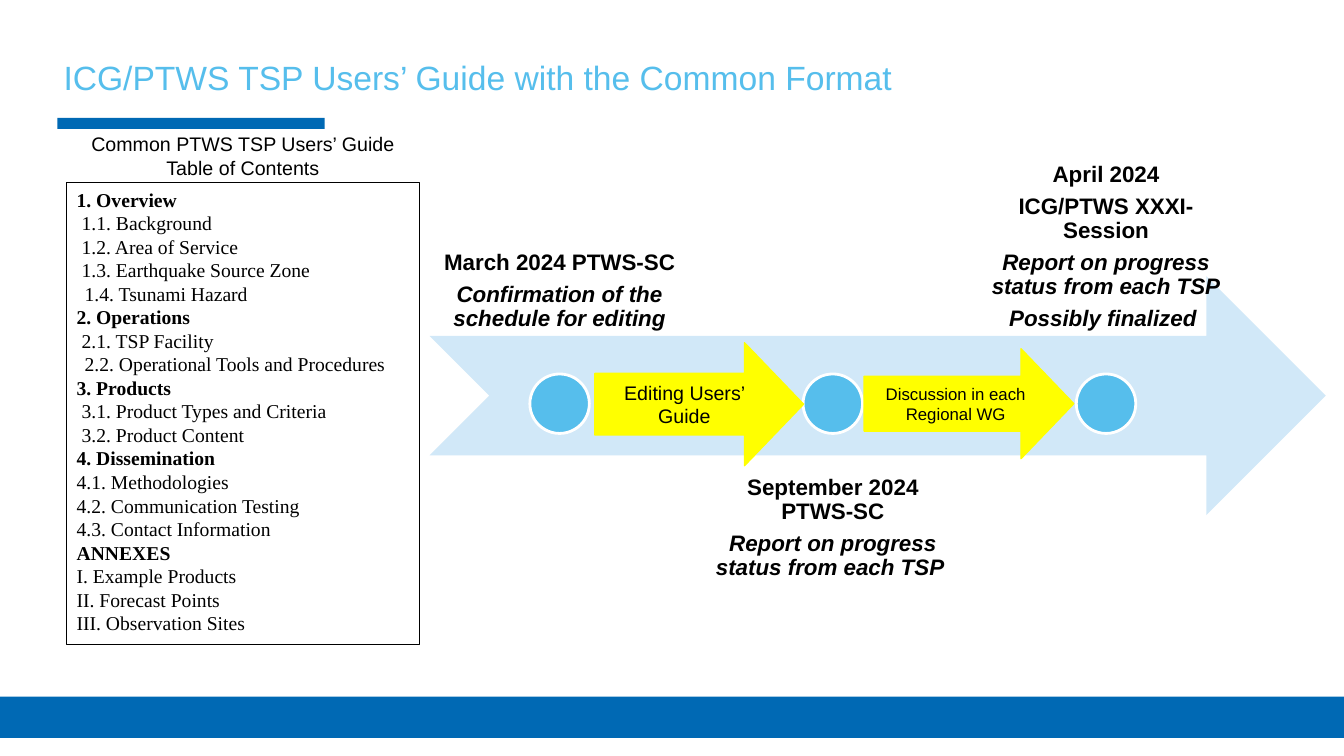
from dataclasses import dataclass
from typing import Optional, Sequence

import pptx
import pptx.dml.color
import pptx.enum.shapes
import pptx.enum.text
import pptx.util
from lxml import etree
from pptx.oxml.ns import qn

Inches = pptx.util.Inches
Pt = pptx.util.Pt
RGBColor = pptx.dml.color.RGBColor
Align = pptx.enum.text.PP_ALIGN
Anchor = pptx.enum.text.MSO_ANCHOR
Preset = pptx.enum.shapes.MSO_SHAPE

BLUE = RGBColor(0x00, 0x69, 0xB4)
SKY = RGBColor(0x56, 0xBE, 0xEC)
PALE_BLUE = RGBColor(0xD1, 0xE8, 0xF8)
YELLOW = RGBColor(0xFF, 0xFF, 0x00)
BLACK = RGBColor(0x00, 0x00, 0x00)
WHITE = RGBColor(0xFF, 0xFF, 0xFF)


@dataclass(frozen=True)
class Box:
    left: float
    top: float
    width: float
    height: float

    def lengths(self) -> list[pptx.util.Length]:
        return [Inches(value) for value in (self.left, self.top, self.width, self.height)]


@dataclass(frozen=True)
class Line:
    text: str
    bold: bool = False
    italic: bool = False
    indent: float = 0


@dataclass(frozen=True)
class Milestone:
    lines: Sequence[Line]
    label_top: float
    anchor: Anchor


@dataclass(frozen=True)
class Step:
    text: str
    box: Box
    size: int


CONTENTS = [
    Line("1. Overview", bold=True),
    Line("1.1. Background", indent=0.05),
    Line("1.2. Area of Service", indent=0.05),
    Line("1.3. Earthquake Source Zone", indent=0.05),
    Line("1.4. Tsunami Hazard", indent=0.08),
    Line("2. Operations", bold=True),
    Line("2.1. TSP Facility", indent=0.05),
    Line("2.2. Operational Tools and Procedures", indent=0.08),
    Line("3. Products", bold=True),
    Line("3.1. Product Types and Criteria", indent=0.05),
    Line("3.2. Product Content", indent=0.05),
    Line("4. Dissemination", bold=True),
    Line("4.1. Methodologies"),
    Line("4.2. Communication Testing"),
    Line("4.3. Contact Information"),
    Line("ANNEXES", bold=True),
    Line("I. Example Products"),
    Line("II. Forecast Points"),
    Line("III. Observation Sites"),
]

MILESTONES = [
    Milestone([
        Line("March 2024 PTWS-SC", bold=True),
        Line("Confirmation of the schedule for editing", bold=True, italic=True),
    ], 1.04, Anchor.BOTTOM),
    Milestone([
        Line("September 2024 PTWS-SC", bold=True),
        Line("Report on progress status from each TSP ", bold=True, italic=True),
    ], 4.6, Anchor.TOP),
    Milestone([
        Line("April 2024", bold=True),
        Line("ICG/PTWS XXXI-Session", bold=True),
        Line("Report on progress status from each TSP", bold=True, italic=True),
        Line("Possibly finalized ", bold=True, italic=True),
    ], 1.04, Anchor.BOTTOM),
]
FIRST_CENTER, MILESTONE_PITCH = 5.55, 2.71
CIRCLE_TOP, CIRCLE_SIZE = 3.71, 0.59
LABEL_WIDTH, LABEL_HEIGHT = 2.58, 2.37

STEPS = [
    Step("Editing Users’ Guide", Box(5.9, 3.4, 2.07, 1.22), 14),
    Step("Discussion in each Regional WG", Box(8.57, 3.46, 2.08, 1.09), 12),
]


def write_text(shape, lines: Sequence[Line], *, size: float, font: str = "Arial",
               color: RGBColor = BLACK, align: Align = Align.CENTER,
               anchor: Anchor = Anchor.TOP, inset_x: float = 0.07, inset_y: float = 0.07,
               line_spacing: float = 1.0, space_after: float = 0) -> None:
    frame = shape.text_frame
    frame.word_wrap = True
    frame.auto_size = pptx.enum.text.MSO_AUTO_SIZE.NONE
    frame.vertical_anchor = anchor
    frame.margin_left = frame.margin_right = Inches(inset_x)
    frame.margin_top = frame.margin_bottom = Inches(inset_y)
    for index, line in enumerate(lines):
        paragraph = frame.paragraphs[0] if index == 0 else frame.add_paragraph()
        properties = paragraph._p.get_or_add_pPr()
        properties.set("marL", str(Inches(line.indent)))
        properties.set("indent", "0")
        etree.SubElement(properties, qn("a:buNone"))
        paragraph.alignment = align
        paragraph.line_spacing = line_spacing
        paragraph.space_before = Pt(0)
        paragraph.space_after = Pt(space_after)
        run = paragraph.add_run()
        run.text = line.text
        run.font.name = font
        run.font.size = Pt(size)
        run.font.bold = line.bold
        run.font.italic = line.italic
        run.font.color.rgb = color


def place(shape, box: Box) -> None:
    shape.left, shape.top, shape.width, shape.height = box.lengths()


def add_filled(slide, preset: Preset, box: Box, fill: RGBColor,
               line: Optional[RGBColor] = None, line_width: float = 1):
    shape = slide.shapes.add_shape(preset, *box.lengths())
    shape.shadow.inherit = False
    shape.fill.solid()
    shape.fill.fore_color.rgb = fill
    if line is None:
        shape.line.fill.background()
    else:
        shape.line.color.rgb = line
        shape.line.width = Pt(line_width)
    return shape


def add_milestone(slide, milestone: Milestone, center: float) -> None:
    label_box = Box(center - LABEL_WIDTH / 2, milestone.label_top, LABEL_WIDTH, LABEL_HEIGHT)
    label = slide.shapes.add_textbox(*label_box.lengths())
    write_text(label, milestone.lines, size=16, anchor=milestone.anchor, inset_x=0.12,
               inset_y=0.12, line_spacing=0.9, space_after=5.6)
    circle_box = Box(center - CIRCLE_SIZE / 2, CIRCLE_TOP, CIRCLE_SIZE, CIRCLE_SIZE)
    add_filled(slide, Preset.OVAL, circle_box, SKY, line=WHITE, line_width=2)


def add_step(slide, step: Step) -> None:
    arrow = add_filled(slide, Preset.RIGHT_ARROW, step.box, YELLOW, line=YELLOW)
    arrow.adjustments[0] = 0.5
    arrow.adjustments[1] = 0.48
    write_text(arrow, [Line(step.text)], size=step.size, anchor=Anchor.MIDDLE)


def main() -> None:
    presentation = pptx.Presentation()
    presentation.slide_width, presentation.slide_height = Inches(13.33), Inches(7.5)
    slide = presentation.slides.add_slide(presentation.slide_layouts[1])

    title, contents = slide.placeholders
    place(title, Box(0.56, 0.49, 8.53, 0.55))
    write_text(title, [Line("ICG/PTWS TSP Users’ Guide with the Common Format")], size=24,
               color=SKY, align=Align.LEFT)

    place(contents, Box(0.66, 1.81, 3.5, 4.58))
    contents.fill.solid()
    contents.fill.fore_color.rgb = WHITE
    contents.line.color.rgb = BLACK
    contents.line.width = Pt(0.75)
    write_text(contents, CONTENTS, size=14, font="Times New Roman", align=Align.JUSTIFY,
               inset_x=0.1, inset_y=0.05)

    add_filled(slide, Preset.RECTANGLE, Box(0.57, 1.17, 2.65, 0.11), BLUE)
    add_filled(slide, Preset.RECTANGLE, Box(0, 6.91, 13.33, 0.41), BLUE)
    add_filled(slide, Preset.NOTCHED_RIGHT_ARROW, Box(4.26, 2.74, 8.89, 2.37), PALE_BLUE)
    for index, milestone in enumerate(MILESTONES):
        add_milestone(slide, milestone, FIRST_CENTER + index * MILESTONE_PITCH)
    for step in STEPS:
        add_step(slide, step)

    caption = slide.shapes.add_textbox(*Box(0.66, 1.24, 3.5, 0.61).lengths())
    write_text(caption, [Line("Common PTWS TSP Users’ Guide Table of Contents")], size=14)

    presentation.save("out.pptx")


if __name__ == "__main__":
    main()
